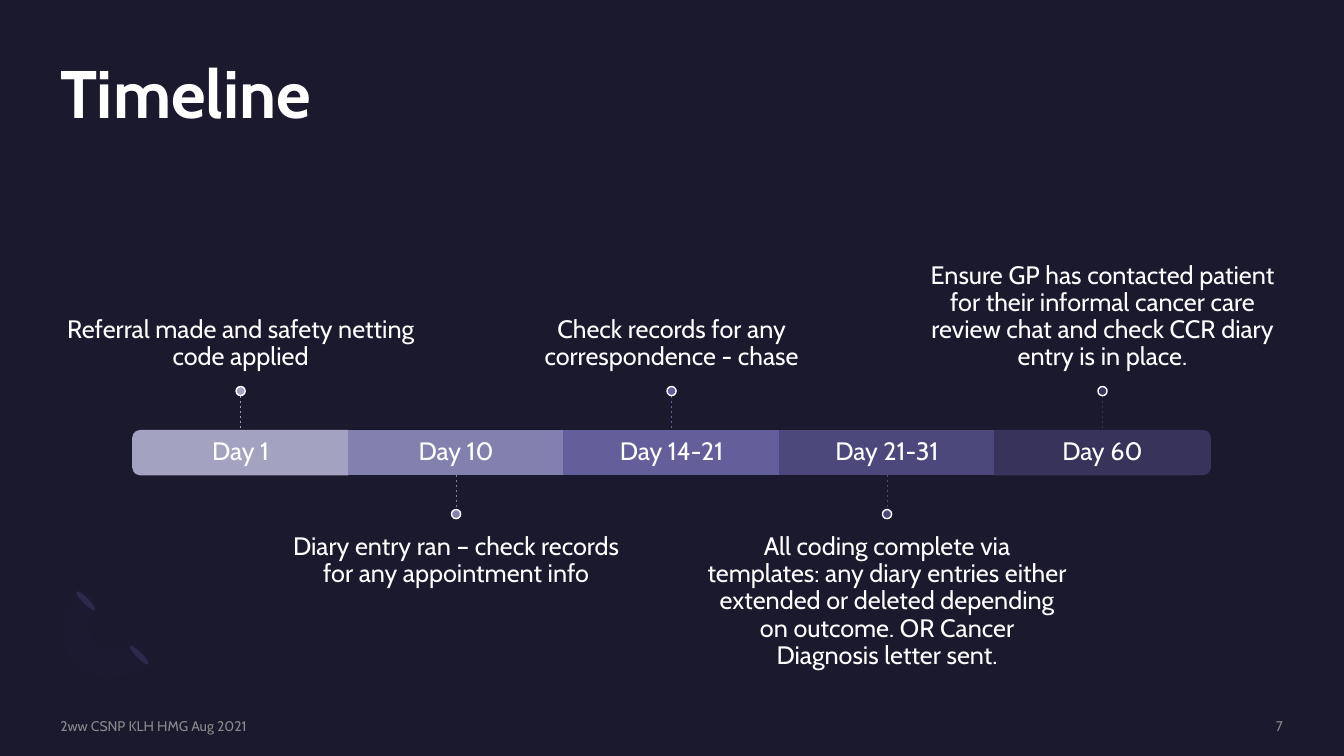
from lxml.etree import SubElement
from pptx import Presentation
from pptx.dml.color import RGBColor
from pptx.enum.dml import MSO_LINE_DASH_STYLE as Dash
from pptx.enum.shapes import MSO_CONNECTOR, MSO_SHAPE as Preset
from pptx.enum.text import MSO_ANCHOR as Anchor, MSO_AUTO_SIZE as AutoSize, PP_ALIGN as Align
from pptx.oxml.ns import qn
from pptx.util import Cm, Pt

FONT = "Cabin"
NAVY = RGBColor(0x1B, 0x19, 0x2E)
WHITE = RGBColor(0xFF, 0xFF, 0xFF)
GREY = RGBColor(0xA6, 0xA6, 0xA6)
PETAL = RGBColor(0x2C, 0x28, 0x4A)
VIOLET = RGBColor(0x77, 0x71, 0xB2)

STAGES = [
    ("Day 1", "Referral made and safety netting code applied", RGBColor(0xA3, 0xA3, 0xC1)),
    ("Day 10", "Diary entry ran – check records for any appointment info", RGBColor(0x82, 0x81, 0xAE)),
    ("Day 14-21", "Check records for any correspondence - chase", RGBColor(0x62, 0x5F, 0x9A)),
    ("Day 21-31", "All coding complete via templates: any diary entries either extended or deleted "
     "depending on outcome. OR Cancer Diagnosis letter sent.", RGBColor(0x4C, 0x48, 0x7B)),
    ("Day 60", "Ensure GP has contacted patient for their informal cancer care review chat and "
     "check CCR diary entry is in place.", RGBColor(0x37, 0x33, 0x5B)),
]

BAR_LEFT, BAR_TOP, BAR_HEIGHT, STAGE_WIDTH = 3.35, 10.85, 1.11, 5.43
STEM, DOT = 0.88, 0.23
CAPTION_WIDTH, CAPTION_HEIGHT, CAPTION_GAP = 9.07, 3.86, 0.38

ARC_START = (1.93, 16.74)
ARC_CURVES = [
    [ARC_START, (1.42, 16.23), (1.47, 15.37), (2.06, 14.78)],
    [(2.51, 15.24), (2.21, 15.52), (2.18, 15.98), (2.44, 16.21)],
    [(2.44, 16.21), (2.69, 16.46), (3.12, 16.43), (3.43, 16.15)],
    [(3.86, 16.61), (3.3, 17.17), (2.41, 17.25), ARC_START],
]


def set_opacity(element, percent):
    color = next(element.iter(qn("a:srgbClr")))
    SubElement(color, qn("a:alpha"), val=str(percent * 1000))


def write(frame, text, size, color, align=Align.LEFT, anchor=Anchor.MIDDLE,
          spacing=0.9, inset_top=0, inset_bottom=0, bold=False):
    frame.word_wrap = True
    frame.auto_size = AutoSize.NONE
    frame.vertical_anchor = anchor
    frame.margin_left = frame.margin_right = 0
    frame.margin_top, frame.margin_bottom = Cm(inset_top), Cm(inset_bottom)
    para = frame.paragraphs[0]
    para.alignment = align
    para.line_spacing = spacing
    span = para.add_run()
    span.text = text
    span.font.name = FONT
    span.font.size = Pt(size)
    span.font.bold = bold
    span.font.color.rgb = color
    return span


def add_text(page, left, top, width, height, text, size, color, **style):
    box = page.shapes.add_textbox(Cm(left), Cm(top), Cm(width), Cm(height))
    return write(box.text_frame, text, size, color, **style)


def paint(shape, fill, line=None):
    shape.shadow.inherit = False
    shape.fill.solid()
    shape.fill.fore_color.rgb = fill
    if line is None:
        shape.line.fill.background()
    else:
        shape.line.color.rgb = line
        shape.line.width = Pt(1)


def add_preset(page, preset, center_x, center_y, width, height, fill, line=None, rotation=0):
    shape = page.shapes.add_shape(preset, Cm(center_x - width / 2), Cm(center_y - height / 2),
                                  Cm(width), Cm(height))
    shape.rotation = rotation
    paint(shape, fill, line)


def add_stem(page, x, start, end, color):
    stem = page.shapes.add_connector(MSO_CONNECTOR.STRAIGHT, Cm(x), Cm(start), Cm(x), Cm(end))
    stem.line.color.rgb = color
    stem.line.width = Pt(0.5)
    stem.line.dash_style = Dash.DASH
    SubElement(stem._element.spPr, qn("a:effectLst"))


def curve_points(curve, steps=12):
    for step in range(steps + 1):
        t = step / steps
        weights = ((1 - t) ** 3, 3 * t * (1 - t) ** 2, 3 * t * t * (1 - t), t ** 3)
        yield tuple(Cm(sum(w * point[axis] for w, point in zip(weights, curve))) for axis in (0, 1))


def add_ornament(page):
    for x, y in ((3.51, 16.51), (2.16, 15.14)):
        add_preset(page, Preset.OVAL, x, y, 0.15, 0.66, PETAL, rotation=135)
    points = [point for curve in ARC_CURVES for point in curve_points(curve)]
    builder = page.shapes.build_freeform(*points[0], scale=1.0)
    builder.add_line_segments(points[1:], close=True)
    arc = builder.convert_to_shape()
    paint(arc, VIOLET)
    set_opacity(arc._element.spPr, 2)


def add_segment(page, index, center, color):
    middle = BAR_TOP + BAR_HEIGHT / 2
    if index in (0, len(STAGES) - 1):
        add_preset(page, Preset.ROUND_2_SAME_RECTANGLE, center, middle, BAR_HEIGHT, STAGE_WIDTH,
                   color, color, rotation=90 if index else 270)
    else:
        add_preset(page, Preset.RECTANGLE, center, middle, STAGE_WIDTH, BAR_HEIGHT, color, color)


def add_stage(page, index, day, caption, color):
    center = BAR_LEFT + (index + 0.5) * STAGE_WIDTH
    add_segment(page, index, center, color)
    add_text(page, center - STAGE_WIDTH / 2, BAR_TOP, STAGE_WIDTH, BAR_HEIGHT,
             day, 18, WHITE, align=Align.CENTER)
    if index % 2 == 0:
        edge, direction = BAR_TOP, -1
        caption_top = edge - STEM - DOT - CAPTION_HEIGHT
        style = {"anchor": Anchor.BOTTOM, "inset_bottom": CAPTION_GAP}
    else:
        edge, direction = BAR_TOP + BAR_HEIGHT, 1
        caption_top = edge + STEM + DOT
        style = {"anchor": Anchor.TOP, "inset_top": CAPTION_GAP}
    tip = edge + direction * STEM
    add_text(page, center - CAPTION_WIDTH / 2, caption_top, CAPTION_WIDTH, CAPTION_HEIGHT,
             caption, 18, WHITE, align=Align.CENTER, **style)
    add_stem(page, center, min(edge, tip), max(edge, tip), color)
    add_preset(page, Preset.OVAL, center, tip + direction * DOT / 2, DOT, DOT, color, WHITE)


def add_title(page, text):
    title = page.shapes.title
    title.left, title.top, title.width, title.height = Cm(1.52), Cm(1.52), Cm(30.81), Cm(3.71)
    write(title.text_frame, text, 48, WHITE, anchor=Anchor.TOP, bold=True)


def add_footer(page, left, width, text, align):
    span = add_text(page, left, 18.08, width, 0.43, text, 10, GREY, align=align, spacing=1.0)
    set_opacity(span._r, 80)


def main():
    deck = Presentation()
    deck.slide_width, deck.slide_height = Cm(33.87), Cm(19.05)
    page = deck.slides.add_slide(deck.slide_layouts[5])
    page.background.fill.solid()
    page.background.fill.fore_color.rgb = NAVY
    add_ornament(page)
    add_title(page, "Timeline")
    for index, stage in enumerate(STAGES):
        add_stage(page, index, *stage)
    add_footer(page, 1.52, 7.32, "2ww CSNP KLH HMG Aug 2021", Align.LEFT)
    add_footer(page, 27.63, 4.7, "7", Align.RIGHT)
    deck.save("out.pptx")


if __name__ == "__main__":
    main()
